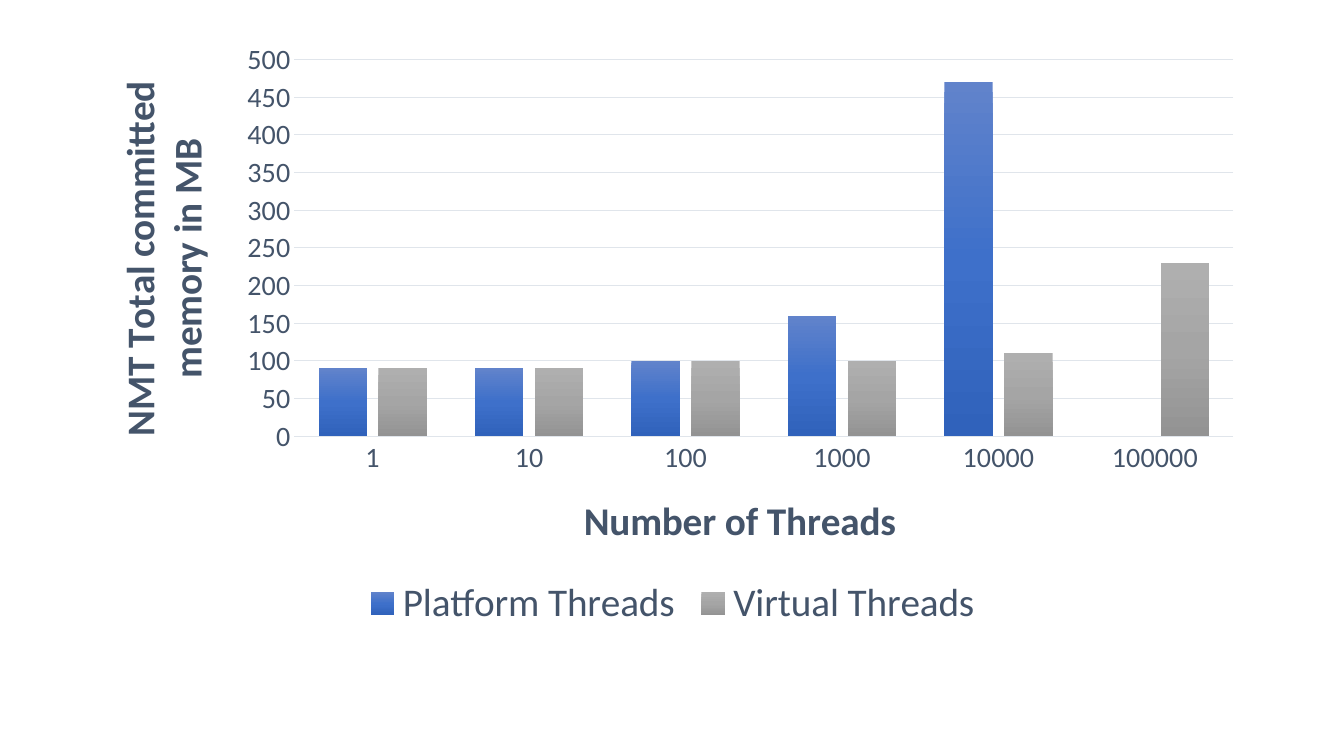
from pptx import Presentation
from pptx import util as u
from pptx.chart.data import CategoryChartData
from pptx.dml.color import RGBColor
from pptx.enum import chart as ch
from pptx.oxml import parse_xml
from pptx.oxml.ns import nsdecls, qn

SLATE = RGBColor(0x44, 0x54, 0x6A)
GRID = RGBColor(0xE0, 0xE5, 0xEB)
BLUES = [RGBColor(0x61, 0x83, 0xCB), RGBColor(0x3E, 0x70, 0xCA), RGBColor(0x30, 0x62, 0xBB)]
GREYS = [RGBColor(0xAF, 0xAF, 0xAF), RGBColor(0xA5, 0xA5, 0xA5), RGBColor(0x93, 0x93, 0x93)]

CHART_W, CHART_H = 11.59, 6.09
THREADS = ["1", "10", "100", "1000", "10000", "100000"]
MEMORY = [
    ("Platform Threads", [90, 90, 100, 160, 470, 0], BLUES),
    ("Virtual Threads", [90, 90, 100, 100, 110, 230], GREYS),
]


def style_font(font, size, bold=False, color=SLATE, name="Calibri"):
    font.size, font.bold, font.name = u.Pt(size), bold, name
    font.color.rgb = color


def write(tf, text, **fmt):
    r = tf.paragraphs[0].add_run()
    r.text = text
    style_font(r.font, **fmt)


def place(element, *box, inner=False):
    for old in element.findall(qn("c:layout")):
        element.remove(old)
    target = '<c:layoutTarget val="inner"/>' if inner else ""
    modes = '<c:xMode val="edge"/><c:yMode val="edge"/>'
    values = "".join(
        f'<c:{k} val="{inches / full:.4f}"/>'
        for k, inches, full in zip("xywh", box, (CHART_W, CHART_H) * 2))
    layout = parse_xml(
        f'<c:layout {nsdecls("c")}><c:manualLayout>{target}{modes}{values}'
        "</c:manualLayout></c:layout>")
    overlay = element.find(qn("c:overlay"))
    element.insert(0 if overlay is None else element.index(overlay), layout)


class Deck:
    """Holds the presentation style and the current slide."""

    def __init__(self, width, height):
        self.prs = Presentation()
        self.prs.slide_width, self.prs.slide_height = u.Inches(width), u.Inches(height)
        self.s = self.prs.slides.add_slide(self.prs.slide_layouts[6])

    def column_chart(self, cats, series, left, top):
        data = CategoryChartData()
        data.categories = cats
        for name, values, _ in series:
            data.add_series(name, values)
        chart = self.s.shapes.add_chart(
            ch.XL_CHART_TYPE.COLUMN_CLUSTERED, u.Inches(left), u.Inches(top),
            u.Inches(CHART_W), u.Inches(CHART_H), data).chart
        chart.has_title = False
        style_font(chart.font, 10)
        plot = chart.plots[0]
        plot.gap_width, plot.overlap, plot.vary_by_categories = 100, -24, False
        for ser, (_, _, colors) in zip(plot.series, series):
            self.gradient(ser, colors)
        place(plot._element.getparent(), 2.05, 0.29, 9.31, 3.74, inner=True)
        return chart

    def gradient(self, ser, colors):
        step = 100000 // (len(colors) - 1)
        stops = "".join(
            f'<a:gs pos="{i * step}"><a:srgbClr val="{c}"/></a:gs>' for i, c in enumerate(colors))
        ser.format.line.fill.background()
        ser._element.spPr.insert(0, parse_xml(
            f'<a:gradFill {nsdecls("a")}><a:gsLst>{stops}</a:gsLst>'
            '<a:lin ang="5400000" scaled="0"/></a:gradFill>'))

    def axis(self, axis, title, x, y, rotation=0):
        axis.major_tick_mark = axis.minor_tick_mark = ch.XL_TICK_MARK.NONE
        style_font(axis.tick_labels.font, 20)
        tf = axis.axis_title.text_frame
        write(tf, title, size=28, bold=True)
        tf._txBody.bodyPr.set("rot", str(rotation * 60000))
        place(axis.axis_title._element, x, y)

    def rule(self, line):
        line.color.rgb, line.width = GRID, u.Pt(0.75)

    def legend(self, chart):
        chart.has_legend = True
        chart.legend.position = ch.XL_LEGEND_POSITION.BOTTOM
        chart.legend.include_in_layout = False
        style_font(chart.legend.font, 28)
        place(chart.legend._element, 2.67, 5.63, 6.26, 0.46)


def main():
    deck = Deck(13.33, 7.5)
    chart = deck.column_chart(THREADS, MEMORY, 0.87, 0.3)
    cat, val = chart.category_axis, chart.value_axis
    deck.axis(cat, "Number of Threads", 4.85, 4.53)
    deck.rule(cat.format.line)
    deck.axis(val, "NMT Total committed memory in MB", 0.18, 0.44, rotation=-90)
    val.minimum_scale, val.maximum_scale, val.major_unit = 0, 500, 50
    val.format.line.fill.background()
    val.has_major_gridlines = True
    deck.rule(val.major_gridlines.format.line)
    deck.legend(chart)
    deck.prs.save("out.pptx")


if __name__ == "__main__":
    main()
